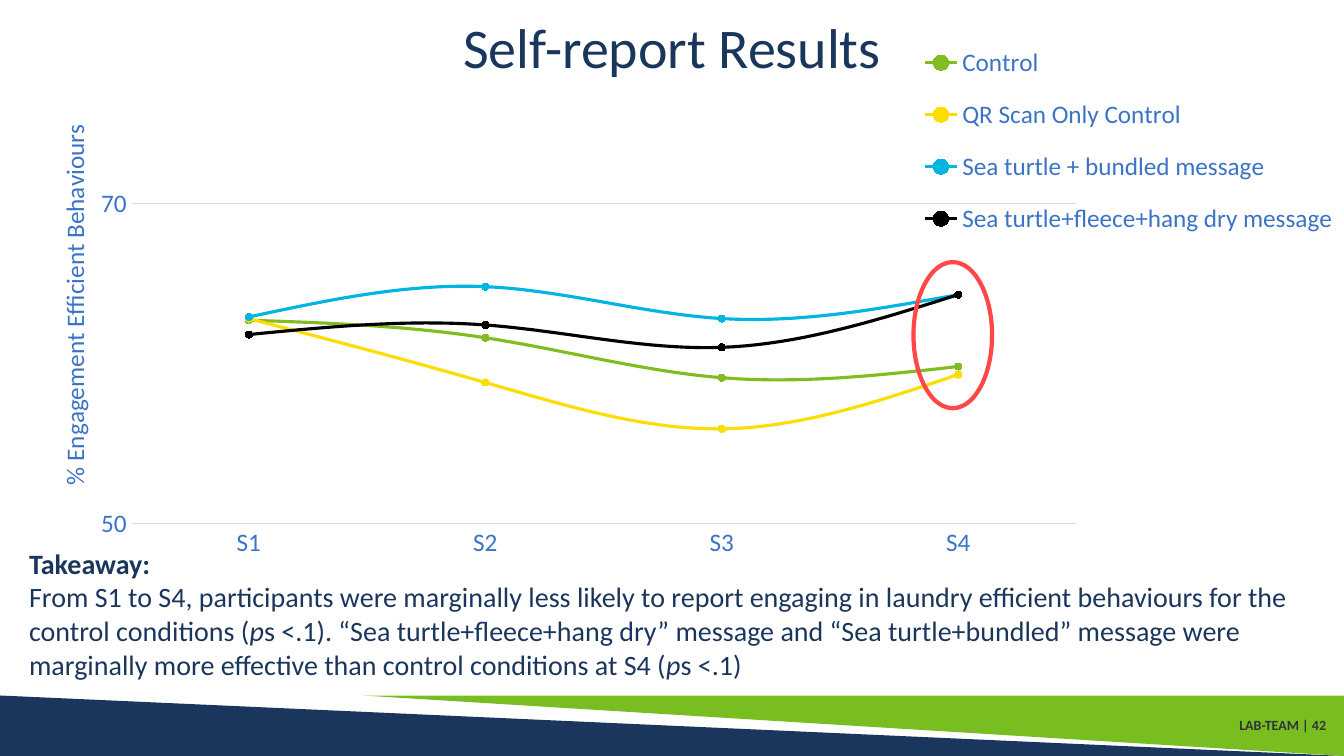
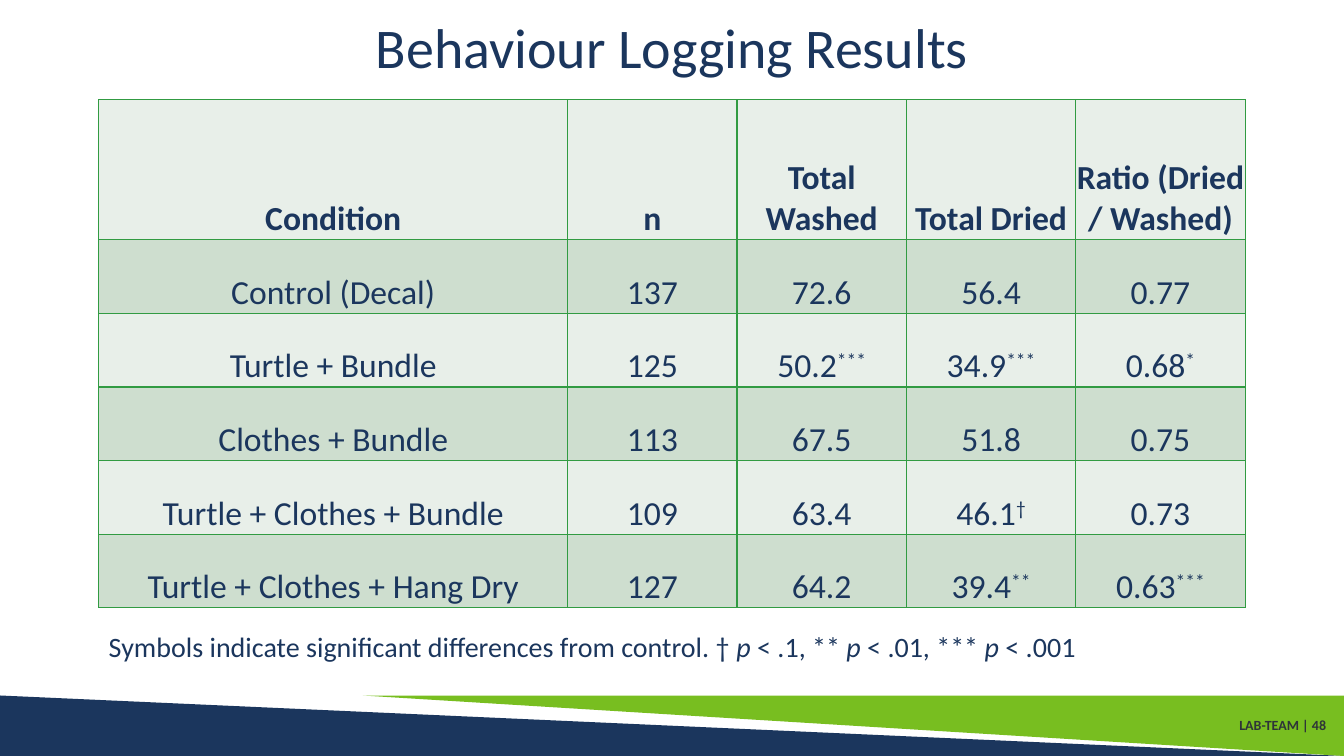
from lxml import etree
from pptx import Presentation
from pptx.chart.data import CategoryChartData
from pptx.dml.color import RGBColor
from pptx.enum.chart import XL_CHART_TYPE, XL_LEGEND_POSITION, XL_MARKER_STYLE, XL_TICK_MARK
from pptx.enum.shapes import MSO_SHAPE
from pptx.enum.text import MSO_ANCHOR, PP_ALIGN
from pptx.oxml.ns import qn
from pptx.util import Inches, Pt

LINE_MARKERS = XL_CHART_TYPE.LINE_MARKERS
LEGEND_RIGHT = XL_LEGEND_POSITION.RIGHT
CIRCLE = XL_MARKER_STYLE.CIRCLE
NO_TICKS = XL_TICK_MARK.NONE
TRIANGLE, OVAL = MSO_SHAPE.RIGHT_TRIANGLE, MSO_SHAPE.OVAL
MIDDLE, BOTTOM = MSO_ANCHOR.MIDDLE, MSO_ANCHOR.BOTTOM
LEFT, CENTER, RIGHT = PP_ALIGN.LEFT, PP_ALIGN.CENTER, PP_ALIGN.RIGHT

FONT = "Calibri"
NAVY, GREEN, FOOTER_GREY = "1B365D", "78BE20", "2E3438"
AXIS_BLUE, GRID_BLUE, HIGHLIGHT = "3B74C6", "D2DFF2", "FF4747"
BORDER, ROW_FILLS = "319B42", ("E8EFE9", "CEDECF")
WIDTH, HEIGHT, BAND_HEIGHT = 13.33, 7.5, 0.6
GREEN_START = 3.6
FOOTER_NAME = "LAB-TEAM"

# Styled text is a list of (text, style); styles: "" plain, "b" bold, "i" italic, "s" superscript
REPORT = {
    "title": "Self-report Results",
    "number": 42,
    "axis": "% Engagement Efficient Behaviours",
    "sessions": ["S1", "S2", "S3", "S4"],
    "series": [
        ("Control", "81BD20", (62.7, 61.6, 59.1, 59.8)),
        ("QR Scan Only Control", "FEDD00", (62.8, 58.8, 55.9, 59.3)),
        ("Sea turtle + bundled message", "00B5E2", (62.9, 64.8, 62.8, 64.3)),
        ("Sea turtle+fleece+hang dry message", "000000", (61.8, 62.4, 61, 64.3)),
    ],
    "takeaway": [
        [("Takeaway:", "b")],
        [("From S1 to S4, participants were marginally less likely to report engaging in "
          "laundry efficient behaviours for the control conditions (", ""),
         ("p", "i"),
         ("s <.1). “Sea turtle+fleece+hang dry” message and “Sea turtle+bundled” message "
          "were marginally more effective than control conditions at S4 (", ""),
         ("p", "i"), ("s <.1)", "")],
    ],
}
LOGGING = {
    "title": "Behaviour Logging Results",
    "number": 48,
    "header": ["Condition", "n", "Total Washed", "Total Dried", "Ratio (Dried / Washed)"],
    "rows": [
        ["Control (Decal)", "137", "72.6", "56.4", "0.77"],
        ["Turtle + Bundle", "125", "50.2***", "34.9***", "0.68*"],
        ["Clothes + Bundle", "113", "67.5", "51.8", "0.75"],
        ["Turtle + Clothes + Bundle", "109", "63.4", "46.1†", "0.73"],
        ["Turtle + Clothes + Hang Dry", "127", "64.2", "39.4**", "0.63***"],
    ],
    "note": [[("Symbols indicate significant differences from control. † ", ""), ("p ", "i"),
              ("< .1, ** ", ""), ("p", "i"), (" < .01, *** ", ""), ("p ", "i"),
              ("< .001", "")]],
}


def rgb(hex_colour):
    return RGBColor.from_string(hex_colour)


def box(left, top, width, height):
    return [Inches(length) for length in (left, top, width, height)]


def style_font(font, size, colour, bold=False):
    font.name, font.size, font.bold = FONT, Pt(size), bold
    font.color.rgb = rgb(colour)


def write(frame, paragraphs, size, colour=NAVY, align=LEFT, spacing=None):
    """Fill a text frame with paragraphs of (text, style) runs."""
    for index, runs in enumerate(paragraphs):
        paragraph = frame.add_paragraph() if index else frame.paragraphs[0]
        paragraph.alignment, paragraph.line_spacing = align, spacing
        for text, style in runs:
            run = paragraph.add_run()
            run.text = text
            style_font(run.font, size, colour, style == "b")
            run.font.italic = style == "i"
            if style == "s":
                run.font._element.set("baseline", "30000")


def add_text(slide, place, paragraphs, size, wrap=True, anchor=None, **look):
    frame = slide.shapes.add_textbox(*box(*place)).text_frame
    frame.word_wrap, frame.vertical_anchor = wrap, anchor
    write(frame, paragraphs, size, **look)


def add_plain_shape(slide, kind, place, fill=None, line=None):
    shape = slide.shapes.add_shape(kind, *box(*place))
    shape.shadow.inherit = False
    if fill:
        shape.fill.solid()
        shape.fill.fore_color.rgb = rgb(fill)
    else:
        shape.fill.background()
    if line:
        shape.line.color.rgb, shape.line.width = rgb(line), Pt(3)
    else:
        shape.line.fill.background()
    return shape


def add_base(prs, content):
    """Add a slide with the shared bands, footer and title."""
    slide = prs.slides.add_slide(prs.slide_layouts[5])
    top = HEIGHT - BAND_HEIGHT
    add_plain_shape(slide, TRIANGLE, (0, top, WIDTH, BAND_HEIGHT), NAVY)
    green_band = add_plain_shape(
        slide, TRIANGLE, (GREEN_START, top, WIDTH - GREEN_START, BAND_HEIGHT), GREEN)
    green_band.rotation = 180
    add_text(slide, (11.74, 7.02, 1.51, 0.37), [[(f"{FOOTER_NAME} | {content['number']}", "b")]],
             10, anchor=MIDDLE, colour=FOOTER_GREY, align=RIGHT, spacing=0.9)
    title = slide.shapes.title
    title.left, title.top, title.width, title.height = box(0, 0, WIDTH, 0.99)
    title.text_frame.vertical_anchor = MIDDLE
    write(title.text_frame, [[(content["title"], "")]], 40, align=CENTER, spacing=0.9)
    return slide


def set_layout(element, inner=False, **fractions):
    """Place a chart part by fractions of the chart's size."""
    for old in element.findall(qn("c:layout")):
        element.remove(old)
    layout = etree.Element(qn("c:layout"))
    manual = etree.SubElement(layout, qn("c:manualLayout"))
    if inner:
        etree.SubElement(manual, qn("c:layoutTarget")).set("val", "inner")
    for name in ("xMode", "yMode"):
        etree.SubElement(manual, qn(f"c:{name}")).set("val", "edge")
    for name, value in fractions.items():
        etree.SubElement(manual, qn(f"c:{name}")).set("val", str(value))
    overlay = element.find(qn("c:overlay"))
    element.insert(0 if overlay is None else element.index(overlay), layout)


def style_axis(axis, line):
    axis.major_tick_mark = axis.minor_tick_mark = NO_TICKS
    style_font(axis.tick_labels.font, 18, AXIS_BLUE)
    line.color.rgb, line.width = rgb(GRID_BLUE), Pt(0.75)


def add_line_chart(slide, content):
    data = CategoryChartData(number_format="0.0")
    data.categories = content["sessions"]
    for name, _, values in content["series"]:
        data.add_series(name, values)
    chart = slide.shapes.add_chart(LINE_MARKERS, *box(0.39, 0.11, 12.94, 5.69), data).chart
    style_font(chart.font, 18, NAVY)
    chart.has_title = False

    for series, (_, colour, _) in zip(chart.plots[0].series, content["series"]):
        series.smooth = True
        series.format.line.color.rgb, series.format.line.width = rgb(colour), Pt(2.25)
        marker = series.marker
        marker.style, marker.size = CIRCLE, 5
        marker.format.fill.solid()
        marker.format.fill.fore_color.rgb = rgb(colour)
        marker.format.line.color.rgb = rgb(colour)
    chart.plots[0].vary_by_categories = False

    sessions, scores = chart.category_axis, chart.value_axis
    style_axis(sessions, sessions.format.line)
    style_axis(scores, scores.major_gridlines.format.line)
    scores.format.line.fill.background()
    scores.minimum_scale, scores.maximum_scale, scores.major_unit = 50, 80, 20
    scores.tick_labels.number_format = "0"
    scores.tick_labels.number_format_is_linked = False
    axis_frame = scores.axis_title.text_frame
    write(axis_frame, [[(content["axis"], "")]], 18, AXIS_BLUE, CENTER)
    axis_frame._txBody.bodyPr.set("rot", "-5400000")
    axis_frame._txBody.bodyPr.set("vert", "horz")
    set_layout(scores.axis_title._element, x=0.01, y=0.19)

    chart.has_legend = True
    chart.legend.position, chart.legend.include_in_layout = LEGEND_RIGHT, True
    style_font(chart.legend.font, 18, AXIS_BLUE)
    set_layout(chart.legend._element, x=0.675, y=0.026, w=0.32, h=0.4)
    set_layout(chart._chartSpace.chart.plotArea, inner=True, x=0.07, y=0.057, w=0.725, h=0.836)


def add_borders(cell):
    properties = cell._tc.get_or_add_tcPr()
    for index, side in enumerate(("lnL", "lnR", "lnT", "lnB")):
        line = etree.Element(qn(f"a:{side}"), w=str(Pt(1)))
        fill = etree.SubElement(line, qn("a:solidFill"))
        etree.SubElement(fill, qn("a:srgbClr")).set("val", BORDER)
        properties.insert(index, line)


def add_results_table(slide, content):
    rows = [content["header"]] + content["rows"]
    widths = [4.65] + [1.68] * 4
    heights = [1.39] + [0.73] * len(content["rows"])
    place = box(0.98, 0.99, sum(widths), sum(heights))
    table = slide.shapes.add_table(len(rows), len(widths), *place).table
    table.first_row = table.horz_banding = False
    for column, width in zip(table.columns, widths):
        column.width = Inches(width)
    for r, (row, height) in enumerate(zip(rows, heights)):
        table.rows[r].height = Inches(height)
        for c, text in enumerate(row):
            cell = table.cell(r, c)
            cell.margin_left = cell.margin_right = cell.margin_top = Inches(0.01)
            cell.margin_bottom = 0
            cell.vertical_anchor = BOTTOM
            cell.fill.solid()
            cell.fill.fore_color.rgb = rgb(ROW_FILLS[r % 2])
            add_borders(cell)
            value = text.rstrip("*†")
            runs = [(value, "" if r else "b")]
            if value != text:
                runs.append((text[len(value):], "s"))
            write(cell.text_frame, [runs], 24, align=CENTER)


def main():
    prs = Presentation()
    prs.slide_width, prs.slide_height = Inches(WIDTH), Inches(HEIGHT)

    report = add_base(prs, REPORT)
    add_line_chart(report, REPORT)
    add_text(report, (0.19, 5.37, 13.14, 1.45), REPORT["takeaway"], 20)
    add_plain_shape(report, OVAL, (9.06, 2.6, 0.78, 1.45), line=HIGHLIGHT)

    logging = add_base(prs, LOGGING)
    add_results_table(logging, LOGGING)
    add_text(logging, (0.98, 6.2, 9.88, 0.44), LOGGING["note"], 20, wrap=False)

    prs.save("out.pptx")


if __name__ == "__main__":
    main()
